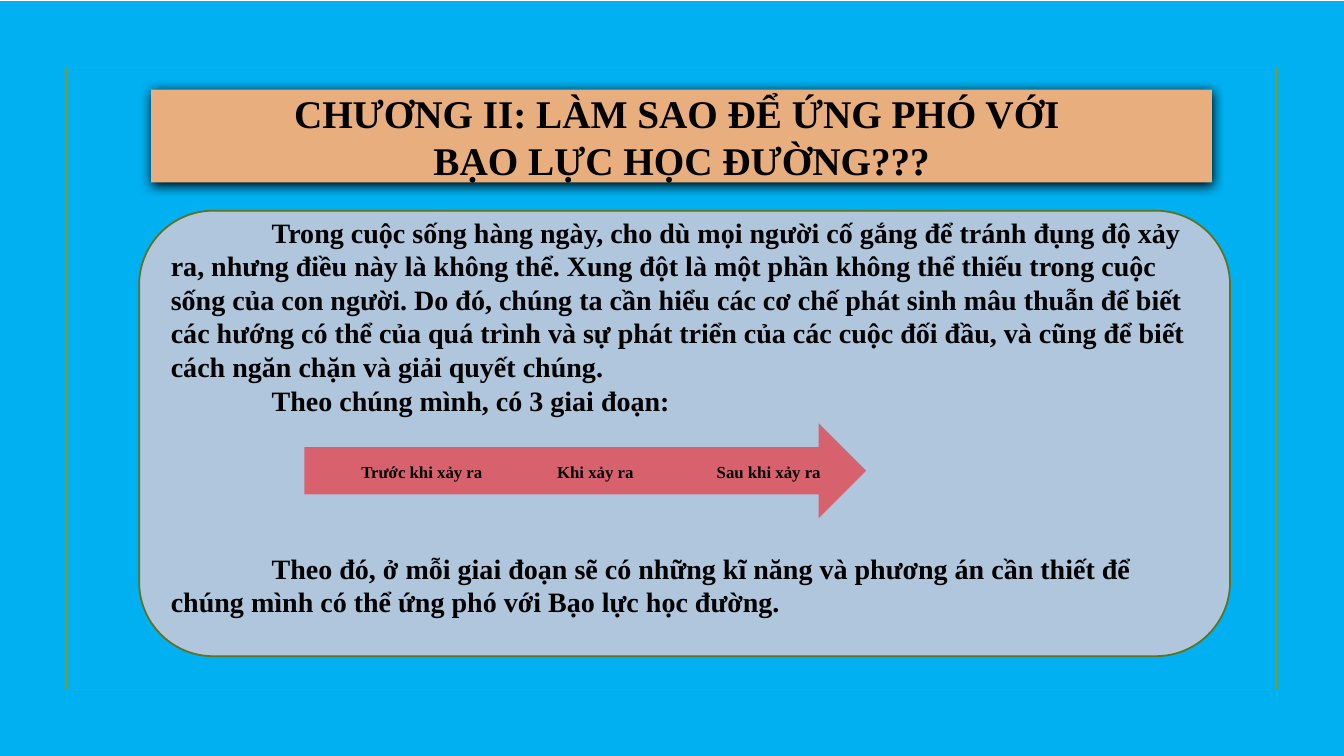
from lxml import etree
from pptx import Presentation
from pptx.dml.color import RGBColor
from pptx.enum.dml import MSO_PATTERN
from pptx.enum.shapes import MSO_SHAPE as SHAPE
from pptx.enum.text import MSO_ANCHOR as ANCHOR, PP_ALIGN as ALIGN
from pptx.oxml.ns import qn
from pptx.util import Inches, Pt

COLORS = {
    "sky": "00B0F0", "white": "FFFFFF", "frame": "83992A", "title": "E8AE7E",
    "panel": "AFC6DD", "panel_line": "61711F", "arrow": "FF0000", "text": "000000",
}
TITLE = ["CHƯƠNG II: LÀM SAO ĐỂ ỨNG PHÓ VỚI ", "BẠO LỰC HỌC ĐƯỜNG???"]
BODY = [
    "Trong cuộc sống hàng ngày, cho dù mọi người cố gắng để tránh đụng độ xảy ra, "
    "nhưng điều này là không thể. Xung đột là một phần không thể thiếu trong cuộc sống "
    "của con người. Do đó, chúng ta cần hiểu các cơ chế phát sinh mâu thuẫn để biết các "
    "hướng có thể của quá trình và sự phát triển của các cuộc đối đầu, và cũng để biết "
    "cách ngăn chặn và giải quyết chúng.",
    "Theo chúng mình, có 3 giai đoạn:",
    "Theo đó, ở mỗi giai đoạn sẽ có những kĩ năng và phương án cần thiết để chúng mình "
    "có thể ứng phó với Bạo lực học đường.",
]
STAGES = ["Trước khi xảy ra", "Khi xảy ra", "Sau khi xảy ra"]
STAGE_LEFT, STAGE_PITCH = 3.47, 1.72
ARROW_GAP = Pt(96)


def rgb(name):
    return RGBColor.from_string(COLORS[name])


def add_box(slide, kind, box, fill=None, line=None):
    sp = slide.shapes.add_shape(kind, *map(Inches, box))
    sp.shadow.inherit = False
    if fill:
        sp.fill.solid()
        sp.fill.fore_color.rgb = rgb(fill)
    else:
        sp.fill.background()
    if line:
        sp.line.color.rgb = rgb(line)
        sp.line.width = Pt(1.25)
    else:
        sp.line.fill.background()
    return sp


def write(sp, lines, size, **paragraph_format):
    """Fill a shape with bold paragraphs, centred vertically."""
    tf = sp.text_frame
    tf.word_wrap = True
    tf.vertical_anchor = ANCHOR.MIDDLE
    font = {"name": "Times New Roman", "size": Pt(size), "bold": True}
    for i, line in enumerate(lines):
        p = tf.paragraphs[0] if i == 0 else tf.add_paragraph()
        for key, value in paragraph_format.items():
            setattr(p, key, value)
        r = p.add_run()
        r.text = line
        for key, value in font.items():
            setattr(r.font, key, value)
        r.font.color.rgb = rgb("text")
    return tf


def set_insets(tf, **insets):
    for side, value in insets.items():
        setattr(tf, f"margin_{side}", Inches(value))


def add_drop_shadow(sp):
    effects = sp._element.spPr.find(qn("a:effectLst"))
    shadow = etree.SubElement(effects, qn("a:outerShdw"), blurRad=str(Pt(8.5)),
                              dist=str(Pt(1)), dir="5400000", rotWithShape="0")
    etree.SubElement(shadow, qn("a:srgbClr"), val=COLORS["text"])


def set_alpha(sp, percent):
    color = sp._element.spPr.find(qn("a:solidFill"))[0]
    etree.SubElement(color, qn("a:alpha"), val=str(percent * 1000))


def add_background(slide):
    fill = slide.background.fill
    fill.patterned()
    fill.pattern = MSO_PATTERN.DARK_HORIZONTAL
    fill.fore_color.rgb = rgb("sky")
    fill.back_color.rgb = rgb("white")


def add_title(slide):
    sp = add_box(slide, SHAPE.RECTANGLE, (1.5, 0.89, 10.52, 0.92), "title")
    add_drop_shadow(sp)
    write(sp, TITLE, 28, alignment=ALIGN.CENTER)


def add_panel(slide):
    sp = add_box(slide, SHAPE.ROUNDED_RECTANGLE, (1.38, 2.09, 10.82, 4.42),
                 "panel", "panel_line")
    tf = write(sp, BODY, 20, alignment=ALIGN.LEFT)
    set_insets(tf, bottom=0.38)
    for p in tf.paragraphs:
        p._p.get_or_add_pPr().set("indent", str(Inches(1)))
    tf.paragraphs[-1].space_before = ARROW_GAP


def add_stage_arrow(slide):
    arrow = add_box(slide, SHAPE.RIGHT_ARROW, (3.02, 4.2, 5.57, 0.94), "arrow")
    set_alpha(arrow, 50)
    for i, stage in enumerate(STAGES):
        box = (STAGE_LEFT + i * STAGE_PITCH, 4.46, 1.43, 0.47)
        label = slide.shapes.add_textbox(*map(Inches, box))
        tf = write(label, [stage], 12, alignment=ALIGN.CENTER, line_spacing=0.9)
        set_insets(tf, left=0, top=0.13, right=0, bottom=0.13)


def main():
    prs = Presentation()
    prs.slide_width, prs.slide_height = Inches(13.33), Inches(7.5)
    slide = prs.slides.add_slide(prs.slide_layouts[6])
    add_background(slide)
    add_box(slide, SHAPE.RECTANGLE, (0.66, 0.67, 12, 6.17), line="frame")
    add_title(slide)
    add_panel(slide)
    add_stage_arrow(slide)
    prs.save("out.pptx")


if __name__ == "__main__":
    main()
